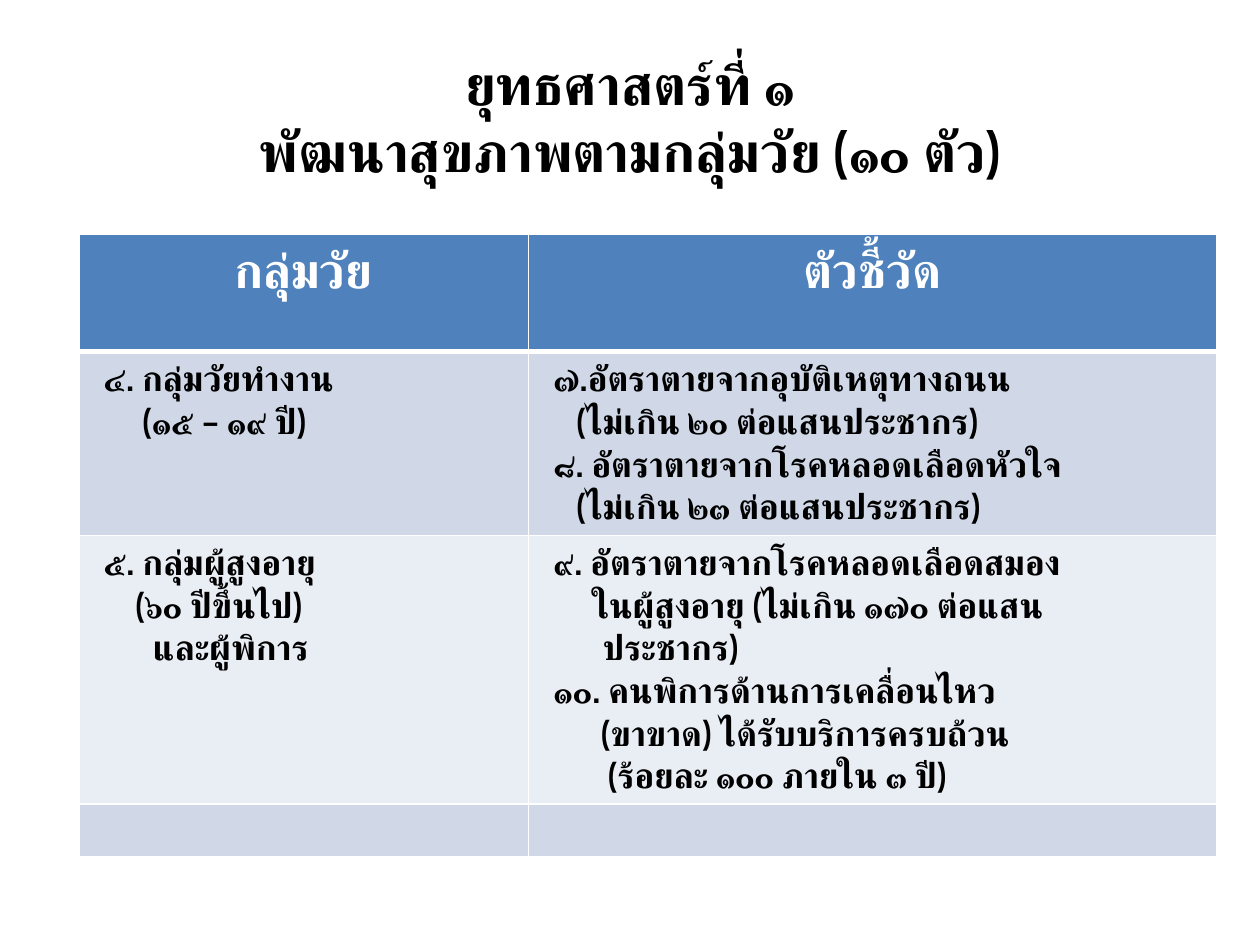
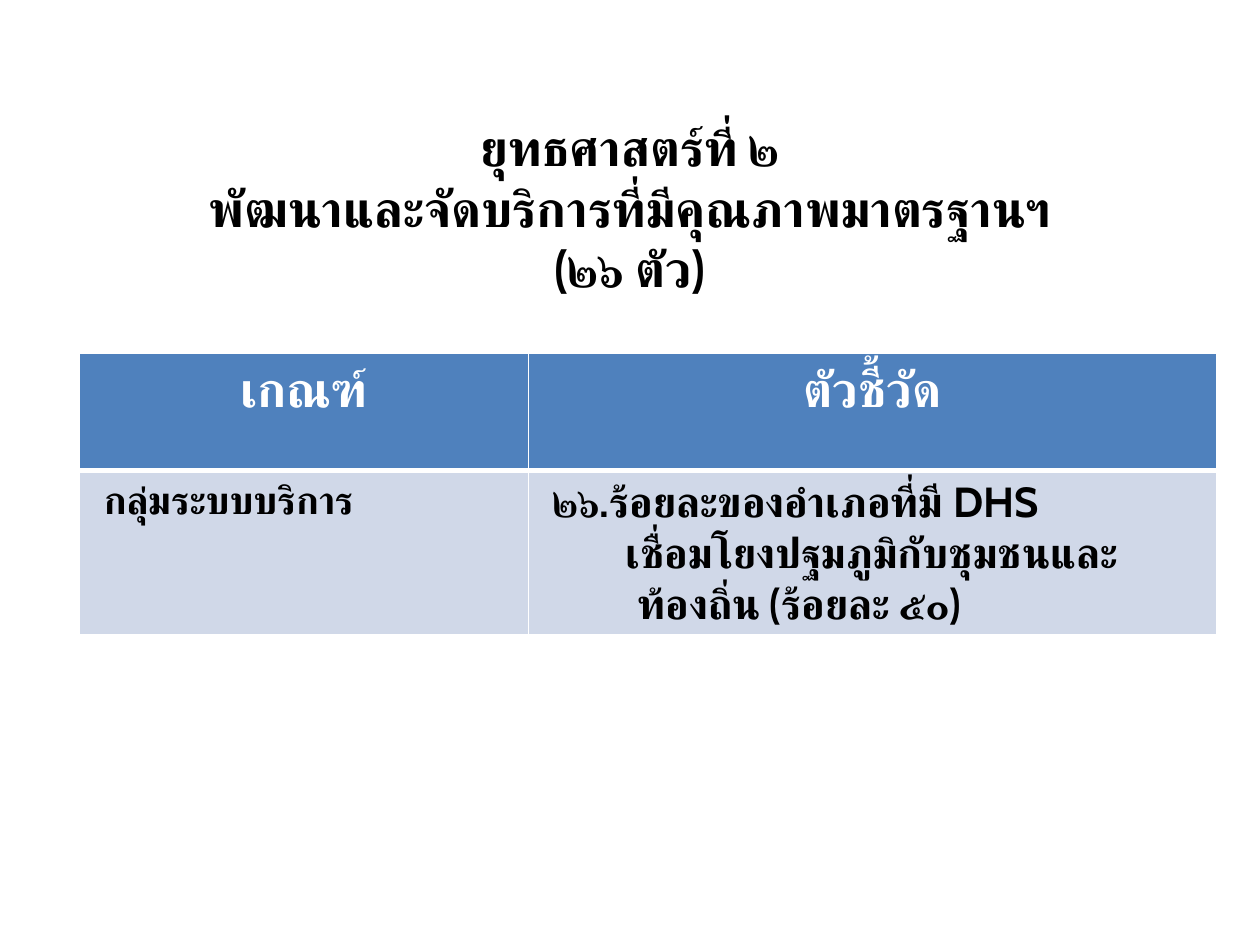
import pptx
import pptx.util
import pptx.oxml
import pptx.dml.color
import pptx.enum.text
import lxml.etree

Pt = pptx.util.Pt
ALIGN = pptx.enum.text.PP_ALIGN
MID = pptx.enum.text.MSO_ANCHOR.MIDDLE
TOP = pptx.enum.text.MSO_ANCHOR.TOP
RGB = pptx.dml.color.RGBColor.from_string
NS = "http://schemas.openxmlformats.org/drawingml/2006/main"
HUES = {"ink": "000000", "white": "FFFFFF", "head": "4F81BD",
        "dark": "D0D8E8", "light": "E9EDF4"}
FONT = "Cabin"
WIDTHS = [257, 393]
LEFT = 45


def write(frame, lines, size, hue="ink", align=ALIGN.LEFT):
    for i, (text, dent) in enumerate(lines):
        para = frame.paragraphs[0] if i == 0 else frame.add_paragraph()
        para.alignment = align
        if dent:
            props = para._p.get_or_add_pPr()
            props.set("marL", str(Pt(dent)))
            props.set("indent", "0")
        run = para.add_run()
        run.text = text
        run.font.size = Pt(size)
        run.font.bold = True
        run.font.name = FONT
        run.font.color.rgb = RGB(HUES[hue])
        for tag in ("ea", "cs"):
            face = lxml.etree.SubElement(run._r.get_or_add_rPr(), f"{{{NS}}}{tag}")
            face.set("typeface", FONT)


def edge(cell, below):
    props = cell._tc.get_or_add_tcPr()
    for i, (side, wide) in enumerate([("L", 1), ("R", 1), ("T", 1), ("B", below)]):
        line = pptx.oxml.parse_xml(
            f'<a:ln{side} xmlns:a="{NS}" w="{Pt(wide)}"><a:solidFill>'
            f'<a:srgbClr val="{HUES["white"]}"/></a:solidFill></a:ln{side}>')
        props.insert(i, line)


plans = [
    {"title": ["ยุทธศาสตร์ที่ ๑", "พัฒนาสุขภาพตามกลุ่มวัย (๑๐ ตัว)"],
     "size": 32, "top": 21.6, "table": 134,
     "heads": ["กลุ่มวัย", "ตัวชี้วัด"],
     "sizes": [20, 20], "highs": [67, 105, 153, 30],
     "rows": [
         [[("๔. กลุ่มวัยทำงาน", 0), ("(๑๕ – ๑๙ ปี)", 22)],
          [("๗.อัตราตายจากอุบัติเหตุทางถนน", 0),
           ("(ไม่เกิน ๒๐ ต่อแสนประชากร)", 13),
           ("๘. อัตราตายจากโรคหลอดเลือดหัวใจ", 0),
           ("(ไม่เกิน ๒๓ ต่อแสนประชากร)", 13)]],
         [[("๕. กลุ่มผู้สูงอายุ", 0), ("(๖๐ ปีขึ้นไป)", 18), ("และผู้พิการ", 28)],
          [("๙. อัตราตายจากโรคหลอดเลือดสมอง", 0),
           ("ในผู้สูงอายุ (ไม่เกิน ๑๗๐ ต่อแสน", 22),
           ("ประชากร)", 28),
           ("๑๐. คนพิการด้านการเคลื่อนไหว", 0),
           ("(ขาขาด) ได้รับบริการครบถ้วน", 27),
           ("(ร้อยละ ๑๐๐ ภายใน ๓ ปี)", 31)]],
         [[], []]]},
    {"title": ["ยุทธศาสตร์ที่ ๒", "พัฒนาและจัดบริการที่มีคุณภาพมาตรฐานฯ", "(๒๖ ตัว)"],
     "size": 28.8, "top": 73.4, "table": 202,
     "heads": ["เกณฑ์", "ตัวชี้วัด"],
     "sizes": [22, 24], "highs": [67, 90],
     "rows": [
         [[("กลุ่มระบบบริการ", 0)],
          [("๒๖.ร้อยละของอำเภอที่มี DHS", 0),
           ("เชื่อมโยงปฐมภูมิกับชุมชนและ", 41),
           ("ท้องถิ่น (ร้อยละ ๕๐)", 48)]]]},
]

deck = pptx.Presentation()
deck.slide_width = Pt(720)
deck.slide_height = Pt(540)

for plan in plans:
    slide = deck.slides.add_slide(deck.slide_layouts[6])
    highs = plan["highs"]
    table = slide.shapes.add_table(
        len(highs), 2, Pt(LEFT), Pt(plan["table"]),
        Pt(sum(WIDTHS)), Pt(sum(highs))).table
    table.horz_banding = False
    table.first_row = False
    for col, wide in zip(table.columns, WIDTHS):
        col.width = Pt(wide)
    heads = [[(text, 0)] for text in plan["heads"]]
    for r, row in enumerate([heads] + plan["rows"]):
        table.rows[r].height = Pt(highs[r])
        for c, lines in enumerate(row):
            cell = table.cell(r, c)
            cell.margin_left = cell.margin_right = Pt(14.4)
            cell.margin_top = cell.margin_bottom = Pt(3.6)
            cell.vertical_anchor = TOP
            cell.fill.solid()
            if r == 0:
                cell.fill.fore_color.rgb = RGB(HUES["head"])
                write(cell.text_frame, lines, 28, hue="white", align=ALIGN.CENTER)
            else:
                cell.fill.fore_color.rgb = RGB(HUES["dark" if r % 2 else "light"])
                write(cell.text_frame, lines, plan["sizes"][c])
            edge(cell, 1 if r else 3)

    title = slide.shapes.add_textbox(Pt(36), Pt(plan["top"]), Pt(648), Pt(90))
    title.text_frame.word_wrap = True
    title.text_frame.vertical_anchor = MID
    write(title.text_frame, [(text, 0) for text in plan["title"]],
          plan["size"], align=ALIGN.CENTER)

deck.save("out.pptx")
